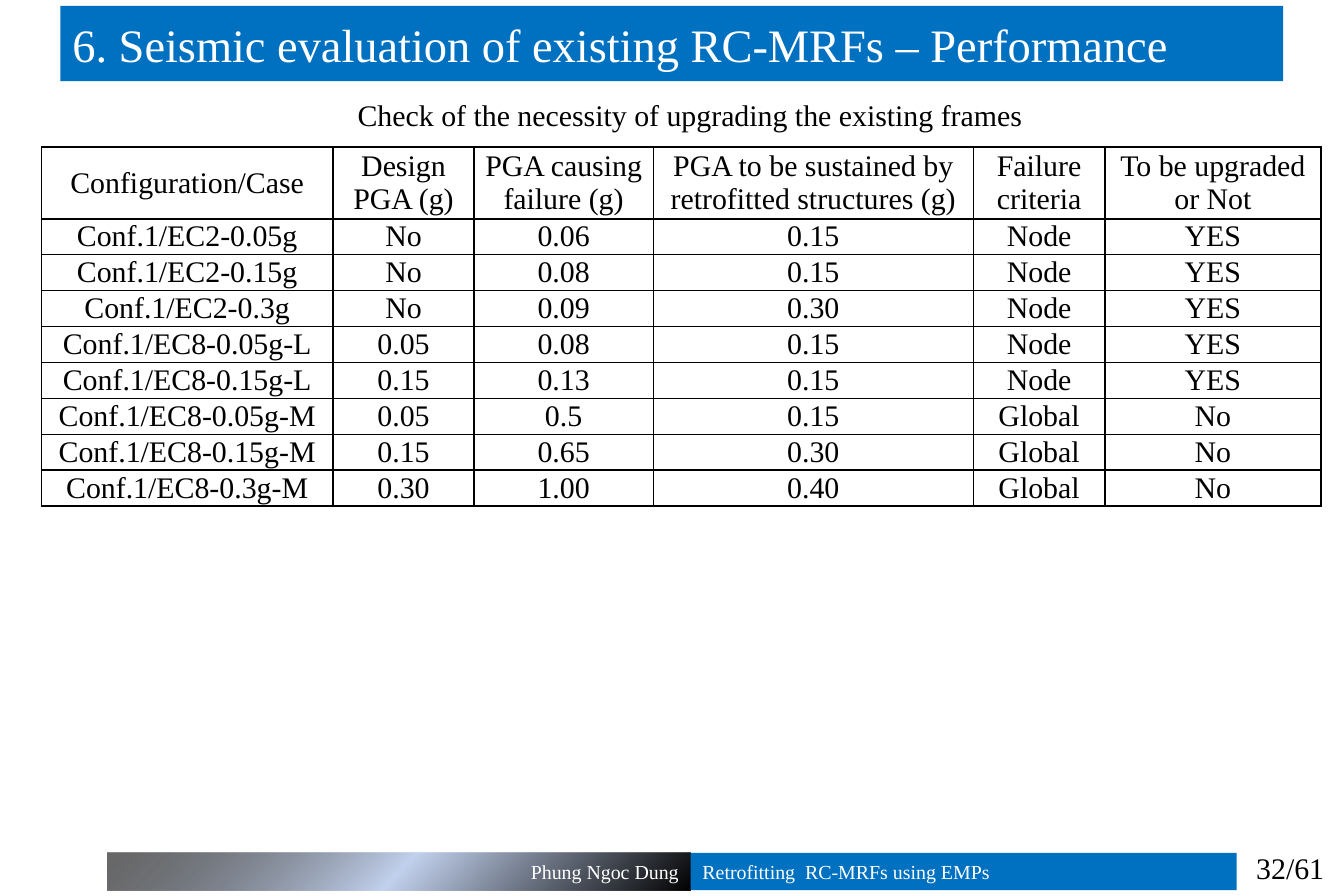
from dataclasses import dataclass

from lxml.etree import SubElement
from pptx import Presentation
from pptx.dml.color import RGBColor
from pptx.enum.shapes import MSO_SHAPE
from pptx.enum.text import MSO_ANCHOR, MSO_AUTO_SIZE, PP_ALIGN
from pptx.oxml import parse_xml
from pptx.oxml.ns import nsdecls, qn
from pptx.util import Pt


@dataclass(frozen=True)
class Theme:
    font: str = "Times New Roman"
    blue: str = "0070C0"
    sheen: str = "C2D1ED"
    black: str = "000000"
    white: str = "FFFFFF"
    title: int = 28
    body: int = 18
    footer: int = 12


THEME = Theme()

HEADERS = ["Configuration/Case", "Design PGA (g)", "PGA causing failure (g)",
           "PGA to be sustained by retrofitted structures (g)",
           "Failure criteria", "To be upgraded or Not"]
CASES = [
    ["Conf.1/EC2-0.05g", "No", "0.06", "0.15", "Node", "YES"],
    ["Conf.1/EC2-0.15g", "No", "0.08", "0.15", "Node", "YES"],
    ["Conf.1/EC2-0.3g", "No", "0.09", "0.30", "Node", "YES"],
    ["Conf.1/EC8-0.05g-L", "0.05", "0.08", "0.15", "Node", "YES"],
    ["Conf.1/EC8-0.15g-L", "0.15", "0.13", "0.15", "Node", "YES"],
    ["Conf.1/EC8-0.05g-M", "0.05", "0.5", "0.15", "Global", "No"],
    ["Conf.1/EC8-0.15g-M", "0.15", "0.65", "0.30", "Global", "No"],
    ["Conf.1/EC8-0.3g-M", "0.30", "1.00", "0.40", "Global", "No"],
]
COLUMN_WIDTHS = [175.7, 85, 108, 193, 79.2, 130.3]
HEADER_HEIGHT, ROW_HEIGHT = 41.8, 20.9


def write(tf, text, size=THEME.body, color=THEME.black, align=PP_ALIGN.CENTER,
          anchor=MSO_ANCHOR.MIDDLE, spacing=0):
    tf.word_wrap = True
    tf.vertical_anchor = anchor
    p = tf.paragraphs[0]
    p.alignment = align
    p.space_before = p.space_after = Pt(spacing)
    r = p.add_run()
    r.text = text
    r.font.name = THEME.font
    r.font.size = Pt(size)
    r.font.color.rgb = RGBColor.from_string(color)


def fill_solid(sp, color):
    sp.fill.solid()
    sp.fill.fore_color.rgb = RGBColor.from_string(color)


def fill_sheen(sp):
    """Radial gradient that starts at the lower right corner."""
    sp.fill.background()
    no_fill = sp.element.spPr.find(qn("a:noFill"))
    no_fill.getparent().replace(no_fill, parse_xml(
        f'<a:gradFill {nsdecls("a")} rotWithShape="1"><a:gsLst>'
        f'<a:gs pos="0"><a:srgbClr val="{THEME.black}"/></a:gs>'
        f'<a:gs pos="50000"><a:srgbClr val="{THEME.sheen}"/></a:gs>'
        f'<a:gs pos="100000"><a:srgbClr val="{THEME.black}">'
        '<a:alpha val="59000"/></a:srgbClr></a:gs></a:gsLst>'
        '<a:path path="circle"><a:fillToRect l="100000" t="100000"/></a:path>'
        '</a:gradFill>'))


def add_title(s, text, x, y, w, h):
    sp = s.shapes.title
    sp.left, sp.top, sp.width, sp.height = Pt(x), Pt(y), Pt(w), Pt(h)
    fill_solid(sp, THEME.blue)
    sp.text_frame.auto_size = MSO_AUTO_SIZE.NONE
    write(sp.text_frame, text, size=THEME.title, color=THEME.white,
          align=PP_ALIGN.LEFT)


def add_label(s, text, x, y, w, h):
    tf = s.shapes.add_textbox(Pt(x), Pt(y), Pt(w), Pt(h)).text_frame
    write(tf, text, anchor=MSO_ANCHOR.TOP)
    tf.auto_size = MSO_AUTO_SIZE.SHAPE_TO_FIT_TEXT


def add_footer_bar(s, text, x, w, align):
    sp = s.shapes.add_shape(MSO_SHAPE.RECTANGLE, Pt(x), Pt(514), Pt(w), Pt(22.5))
    sp.shadow.inherit = False
    sp.line.fill.background()
    write(sp.text_frame, text, size=THEME.footer, color=THEME.white, align=align)
    return sp


def set_borders(cell, width=1):
    tcPr = cell._tc.get_or_add_tcPr()
    for side in ("a:lnL", "a:lnR", "a:lnT", "a:lnB"):
        ln = SubElement(tcPr, qn(side), w=str(Pt(width)))
        SubElement(SubElement(ln, qn("a:solidFill")), qn("a:srgbClr"),
                   val=THEME.black)


def add_grid(s, rows, x, y):
    heights = [HEADER_HEIGHT] + [ROW_HEIGHT] * (len(rows) - 1)
    table = s.shapes.add_table(len(rows), len(COLUMN_WIDTHS), Pt(x), Pt(y),
                               Pt(sum(COLUMN_WIDTHS)), Pt(sum(heights))).table
    table.first_row = table.horz_banding = False
    for column, width in zip(table.columns, COLUMN_WIDTHS):
        column.width = Pt(width)
    for row, height, texts in zip(table.rows, heights, rows):
        row.height = Pt(height)
        for cell, text in zip(row.cells, texts):
            cell.margin_left = cell.margin_right = Pt(5)
            cell.margin_top = cell.margin_bottom = 0
            cell.vertical_anchor = MSO_ANCHOR.MIDDLE
            set_borders(cell)
            cell.fill.background()
            write(cell.text_frame, text, spacing=3)


def main():
    prs = Presentation()
    prs.slide_width, prs.slide_height = Pt(810), Pt(540)
    s = prs.slides.add_slide(prs.slide_layouts[5])

    author = add_footer_bar(s, "Phung Ngoc Dung", 64.6, 351.7, PP_ALIGN.RIGHT)
    fill_sheen(author)
    topic = add_footer_bar(s, "Retrofitting  RC-MRFs using EMPs", 416.3, 329,
                           PP_ALIGN.LEFT)
    fill_solid(topic, THEME.blue)
    add_label(s, "32/61", 745.2, 508.3, 64.8, 29)

    add_title(s, "6. Seismic evaluation of existing RC-MRFs – Performance",
              36.4, 3.6, 737, 45.3)
    add_grid(s, [HEADERS] + CASES, 25, 88.7)
    add_label(s, "Check of the necessity of upgrading the existing frames",
              138, 55, 556, 29)
    prs.save("out.pptx")


if __name__ == "__main__":
    main()
